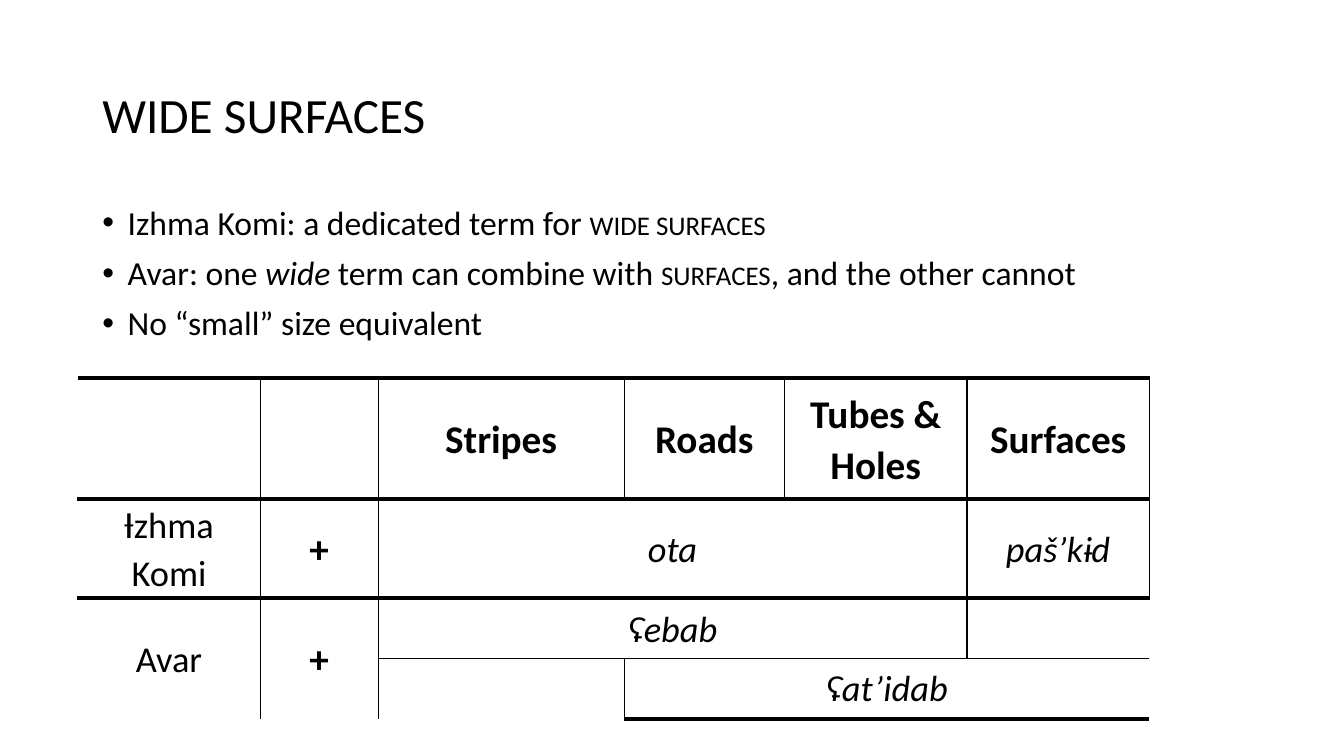
"""Builds a slide on the terms for wide surfaces in Izhma Komi and Avar."""
from lxml import etree
from pptx import Presentation
from pptx.dml.color import RGBColor
from pptx.enum.text import MSO_ANCHOR, PP_ALIGN
from pptx.oxml.ns import qn
from pptx.util import Cm, Pt

MIDDLE, TOP = MSO_ANCHOR.MIDDLE, MSO_ANCHOR.TOP
CENTER = PP_ALIGN.CENTER
BLACK, WHITE = "000000", "FFFFFF"
NO_STYLE = "{2D5ABB26-0587-4C30-8999-92F81FD0307C}"

TITLE = ("wide surfaces", "small")
POINTS = [
    [("Izhma Komi: a dedicated term for ", ""), ("wide surfaces", "small")],
    [("Avar: one ", ""), ("wide", "italic"), (" term can combine with ", ""),
     ("surfaces", "small"), (", and the other cannot", "")],
    [("No “small” size equivalent", "")],
]
COLUMNS = [4.6, 2.97, 6.2, 4.04, 4.6, 4.6]
ROWS = [3.05, 2.49, 1.52, 1.52]
SIZES = {"bold": 28, "italic": 26, "": 26}
EDGES = {"L": 1, "R": 1, "T": 3, "B": 3}
# row, column, rows spanned, columns spanned, text, style, edges that differ
TERMS = [
    (0, 0, 1, 1, "", "", {}),
    (0, 1, 1, 1, "", "", {}),
    (0, 2, 1, 1, "Stripes", "bold", {}),
    (0, 3, 1, 1, "Roads", "bold", {}),
    (0, 4, 1, 1, "Tubes & Holes", "bold", {}),
    (0, 5, 1, 1, "Surfaces", "bold", {}),
    (1, 0, 1, 1, "Ɨzhma Komi", "", {}),
    (1, 1, 1, 1, "+", "bold", {}),
    (1, 2, 1, 3, "ota", "italic", {}),
    (1, 5, 1, 1, "paš’kɨd", "italic", {}),
    (2, 0, 2, 1, "Avar", "", {}),
    (2, 1, 2, 1, "+", "bold", {}),
    (2, 2, 1, 3, "ʢebab", "italic", {"B": 1}),
    (2, 5, 1, 1, "", "", {"R": 0, "B": 1}),
    (3, 2, 1, 1, "", "", {"T": 1, "B": 0}),
    (3, 3, 1, 3, "ʢat’idab", "italic", {"T": 1}),
]


def color(code):
    """Turn a hex string into a colour."""
    return RGBColor.from_string(code)


def add_run(paragraph, text, style, size):
    """Add one run in the given style."""
    run = paragraph.add_run()
    run.text = text
    run.font.name, run.font.size = "Calibri", Pt(size)
    run.font.color.rgb = color(BLACK)
    run.font.bold, run.font.italic = style == "bold", style == "italic"
    if style == "small":
        run.font._element.set("cap", "small")


def add_text(slide, top, height, anchor, lines, size):
    """Add a text box and return its paragraphs."""
    frame = slide.shapes.add_textbox(Cm(2.33), Cm(top), Cm(29.21), Cm(height)).text_frame
    frame.word_wrap, frame.vertical_anchor = True, anchor
    for number, runs in enumerate(lines):
        paragraph = frame.add_paragraph() if number else frame.paragraphs[0]
        paragraph.line_spacing = 0.9
        for text, style in runs:
            add_run(paragraph, text, style, size)
    return frame.paragraphs


def add_bullet(paragraph):
    """Give a paragraph a hanging bullet."""
    paragraph.space_before = Pt(10)
    properties = paragraph._p.get_or_add_pPr()
    properties.set("marL", str(Cm(0.64)))
    properties.set("indent", str(-Cm(0.64)))
    etree.SubElement(properties, qn("a:buFont"), typeface="Arial")
    etree.SubElement(properties, qn("a:buChar"), char="•")


def paint_cell(cell, edges):
    """Set the borders, by side as (width, colour), and the white fill."""
    properties = cell._tc.get_or_add_tcPr()
    for side in "LRTB":
        width, code = edges.get(side, (0, BLACK))
        line = etree.SubElement(properties, qn("a:ln" + side), w=str(Pt(width)))
        if width:
            fill = etree.SubElement(line, qn("a:solidFill"))
            etree.SubElement(fill, qn("a:srgbClr"), val=code)
        else:
            etree.SubElement(line, qn("a:noFill"))
    cell.fill.solid()
    cell.fill.fore_color.rgb = color(WHITE)


def fill_term(table, row, column, tall, wide, text, style, changes):
    """Merge, border and fill one term's block of cells."""
    last_row, last_column = row + tall - 1, column + wide - 1
    widths = {**EDGES, **changes}
    term = table.cell(row, column)
    if tall * wide > 1:
        term.merge(table.cell(last_row, last_column))
    for r in range(row, last_row + 1):
        for c in range(column, last_column + 1):
            outer = {"L": c == column, "R": c == last_column,
                     "T": r == row, "B": r == last_row}
            paint_cell(table.cell(r, c), {
                side: (widths[side], WHITE if side == "L" and c == 0 else BLACK)
                for side in outer if outer[side]})
    if text:
        term.vertical_anchor = MIDDLE
        term.margin_left = term.margin_right = Cm(0.18)
        term.margin_top = term.margin_bottom = 0
        paragraph = term.text_frame.paragraphs[0]
        paragraph.alignment = CENTER
        if row < len(ROWS) - 1:
            paragraph.line_spacing, paragraph.space_before = 1.07, Pt(3)
        add_run(paragraph, text, style, SIZES[style])


def main():
    """Build and save the slide."""
    deck = Presentation()
    deck.slide_width, deck.slide_height = Cm(33.87), Cm(19.05)
    slide = deck.slides.add_slide(deck.slide_layouts[6])
    add_text(slide, 1.01, 3.68, MIDDLE, [[TITLE]], 44)
    for point in add_text(slide, 5.07, 12.09, TOP, POINTS, 24):
        add_bullet(point)
    table = slide.shapes.add_table(
        len(ROWS), len(COLUMNS), Cm(1.96), Cm(9.53), Cm(sum(COLUMNS)), Cm(sum(ROWS))).table
    table._tbl.tblPr.find(qn("a:tableStyleId")).text = NO_STYLE
    table.first_row = table.horz_banding = False
    for column, width in zip(table.columns, COLUMNS):
        column.width = Cm(width)
    for row, height in zip(table.rows, ROWS):
        row.height = Cm(height)
    for term in TERMS:
        fill_term(table, *term)
    deck.save("out.pptx")


if __name__ == "__main__":
    main()
